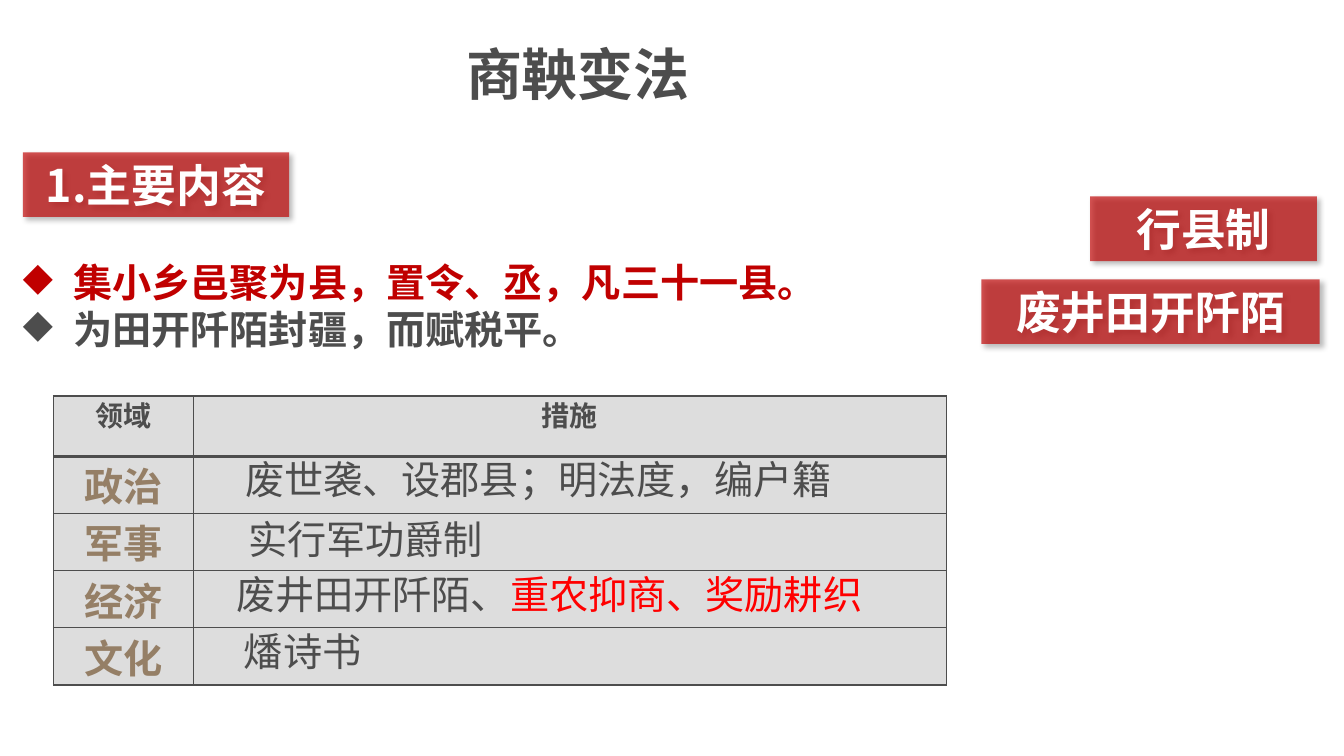
from dataclasses import dataclass

import pptx
import pptx.dml.color
import pptx.enum.shapes
import pptx.enum.text
import pptx.oxml
import pptx.oxml.ns
import pptx.util
from lxml import etree

Cm = pptx.util.Cm
Pt = pptx.util.Pt
RGBColor = pptx.dml.color.RGBColor
ALIGN = pptx.enum.text.PP_ALIGN
ANCHOR = pptx.enum.text.MSO_ANCHOR
qn = pptx.oxml.ns.qn
NS = pptx.oxml.ns.nsdecls("a")

RED = RGBColor(0xC0, 0x00, 0x00)
BRIGHT_RED = RGBColor(0xFF, 0x00, 0x00)
GRAY = RGBColor(0x4D, 0x4D, 0x4D)
CELL_GRAY = RGBColor(0xDD, 0xDD, 0xDD)
TAN = RGBColor(0x95, 0x7F, 0x66)
WHITE = RGBColor(0xFF, 0xFF, 0xFF)
SC = "Noto Sans CJK SC"
JP = "Noto Sans CJK JP"


@dataclass
class Label:
    text: str
    left: float
    top: float
    width: float


@dataclass
class Measure:
    runs: list[tuple[str, RGBColor]]
    left: float
    top: float
    width: float


LABELS = [
    Label("1.主要内容", 0.58, 3.84, 6.71),
    Label("行县制", 27.48, 4.95, 5.72),
    Label("废井田开阡陌", 24.74, 7.04, 8.53),
]
QUOTES = [
    ("集小乡邑聚为县，置令、丞，凡三十一县。", RED),
    ("为田开阡陌封疆，而赋税平。", GRAY),
]
FIELDS = ["政治", "军事", "经济", "文化"]
MEASURES = [
    Measure([("废世袭、设郡县；明法度，编户籍", GRAY)], 5.92, 11.48, 15.32),
    Measure([("实行军功爵制", GRAY)], 5.97, 12.98, 6.5),
    Measure([("废井田开阡陌、", GRAY), ("重农抑商、奖励耕织", BRIGHT_RED)],
            5.69, 14.38, 16.31),
    Measure([("燔诗书", GRAY)], 5.89, 15.82, 3.48),
]


def add_text(p, text: str, *, size: float, color: RGBColor, font: str = SC,
             bold: bool = False, align=None) -> None:
    """Append one formatted run to a paragraph."""
    r = p.add_run()
    r.text = text
    r.font.size = Pt(size)
    r.font.bold = bold
    r.font.color.rgb = color
    r.font.name = font
    ea = etree.SubElement(r.font._element, qn("a:ea"))
    ea.set("typeface", font)
    if align is not None:
        p.alignment = align


def add_box(s, left: float, top: float, width: float, height: float,
            wrap: bool = True):
    """Add a text box without vertical insets and return its frame."""
    tf = s.shapes.add_textbox(Cm(left), Cm(top), Cm(width), Cm(height)).text_frame
    tf.word_wrap = wrap
    tf.margin_top = tf.margin_bottom = 0
    return tf


def add_label(s, label: Label) -> None:
    """Add a translucent red bar with a soft shadow."""
    sp = s.shapes.add_shape(pptx.enum.shapes.MSO_SHAPE.RECTANGLE, Cm(label.left),
                            Cm(label.top), Cm(label.width), Cm(1.63))
    sp.line.fill.background()
    sp.fill.solid()
    sp.fill.fore_color.rgb = RED
    clr = sp._element.spPr.find(f".//{qn('a:srgbClr')}")
    etree.SubElement(clr, qn("a:alpha")).set("val", "67000")
    sp.shadow.inherit = False
    effects = sp._element.spPr.find(qn("a:effectLst"))
    effects.append(pptx.oxml.parse_xml(
        f'<a:outerShdw {NS} blurRad="{Pt(4)}" dist="{Pt(3)}" dir="2700000">'
        '<a:srgbClr val="000000"><a:alpha val="40000"/></a:srgbClr></a:outerShdw>'))
    tf = sp.text_frame
    tf.margin_top = tf.margin_bottom = 0
    tf.vertical_anchor = ANCHOR.MIDDLE
    add_text(tf.paragraphs[0], label.text, size=32, color=WHITE, font=JP,
             bold=True, align=ALIGN.CENTER)


def add_quotes(s) -> None:
    """Add the diamond-bulleted quotations."""
    tf = add_box(s, 0.33, 6.27, 22.63, 3.84)
    tf.margin_top = Cm(0.23)
    for i, (text, color) in enumerate(QUOTES):
        p = tf.add_paragraph() if i else tf.paragraphs[0]
        p.line_spacing = Pt(33.6)
        add_text(p, text, size=28, color=color, bold=True, align=ALIGN.JUSTIFY)
        pPr = p._p.get_or_add_pPr()
        pPr.set("marL", str(Cm(1.27)))
        pPr.set("indent", str(-Cm(1.27)))
        etree.SubElement(pPr, qn("a:buChar")).set("char", "◆")


def style_cell(cell, top: float, bottom: float) -> None:
    """Give a cell its borders, fill and insets."""
    tcPr = cell._tc.get_or_add_tcPr()
    for side, width in (("L", 1), ("R", 1), ("T", top), ("B", bottom)):
        tcPr.append(pptx.oxml.parse_xml(
            f'<a:ln{side} {NS} w="{Pt(width)}"><a:solidFill>'
            f'<a:srgbClr val="{GRAY}"/></a:solidFill></a:ln{side}>'))
    cell.fill.solid()
    cell.fill.fore_color.rgb = CELL_GRAY
    cell.margin_top = cell.margin_bottom = 0


def add_reform_table(s) -> None:
    """Add the table of reform fields."""
    table = s.shapes.add_table(len(FIELDS) + 1, 2, Cm(1.35), Cm(9.98),
                               Cm(22.5), Cm(7.28)).table
    table.first_row = table.horz_banding = False
    for col, width in zip(table.columns, (3.53, 18.97)):
        col.width = Cm(width)
    for i, row in enumerate(table.rows):
        row.height = Cm(1.44 if i else 1.52)
        for cell in row.cells:
            style_cell(cell, top=3 if i == 1 else 1, bottom=1 if i else 3)
    for cell, text in zip(table.rows[0].cells, ("领域", "措施")):
        cell.margin_top = Cm(0.13)
        add_text(cell.text_frame.paragraphs[0], text, size=20, color=GRAY,
                 font="Arial", bold=True, align=ALIGN.CENTER)
    for i, field in enumerate(FIELDS, 1):
        add_text(table.cell(i, 0).text_frame.paragraphs[0], field, size=28,
                 color=TAN, bold=True, align=ALIGN.CENTER)


def main() -> None:
    prs = pptx.Presentation()
    prs.slide_width, prs.slide_height = Cm(33.88), Cm(19.05)
    s = prs.slides.add_slide(prs.slide_layouts[6])

    # Title
    tf = add_box(s, 11.5, 0.99, 6.96, 2.03)
    add_text(tf.paragraphs[0], "商鞅变法", size=40, color=GRAY, bold=True)

    # Quotations and red labels
    add_quotes(s)
    for label in LABELS:
        add_label(s, label)

    # Table with the measures laid over its right column
    add_reform_table(s)
    for m in MEASURES:
        p = add_box(s, m.left, m.top, m.width, 1.45, wrap=False).paragraphs[0]
        for text, color in m.runs:
            add_text(p, text, size=28, color=color, align=ALIGN.CENTER)

    prs.save("out.pptx")


if __name__ == "__main__":
    main()
